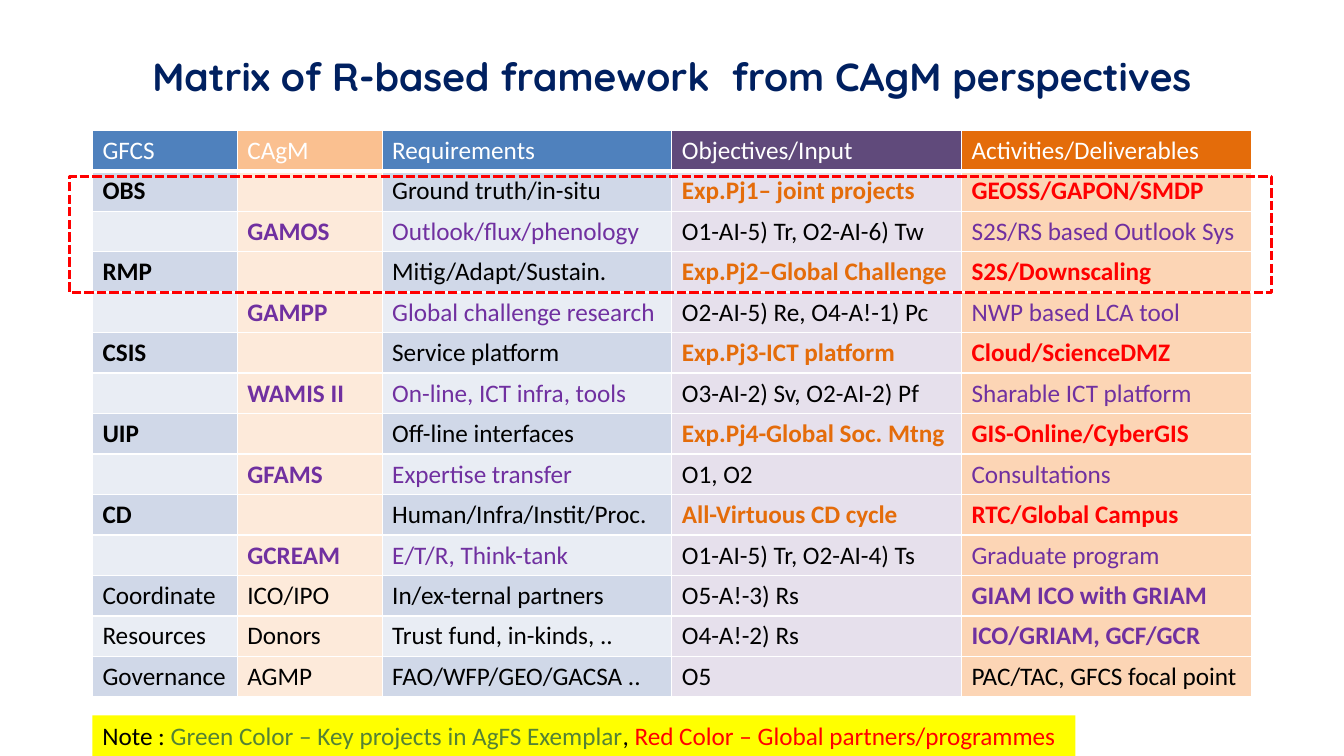
from dataclasses import dataclass

from lxml.etree import SubElement
from pptx import Presentation
from pptx.dml.color import RGBColor
from pptx.enum.dml import MSO_LINE
from pptx.enum.shapes import MSO_SHAPE
from pptx.enum.text import MSO_ANCHOR, MSO_AUTO_SIZE, PP_ALIGN
from pptx.oxml.ns import qn
from pptx.util import Cm, Pt

BLACK, WHITE, RED = "000000", "FFFFFF", "FF0000"
PURPLE, ORANGE, GREEN, NAVY = "7030A0", "E46C0A", "548235", "002060"
BODY = {"name": "Calibri", "size": Pt(18)}


@dataclass(frozen=True)
class Style:
    color: str
    bold: bool = False


@dataclass(frozen=True)
class MatrixRow:
    texts: tuple[str, ...]
    styles: tuple[Style, ...]
    fills: tuple[str, ...]
    rule_below: float = 1


PLAIN, STRONG = Style(BLACK), Style(BLACK, True)
VIOLET, VIOLET_STRONG = Style(PURPLE), Style(PURPLE, True)

# Text styles for each kind of row
HEADER = (Style(WHITE),) * 5
PILLAR = (STRONG, PLAIN, PLAIN, Style(ORANGE, True), Style(RED, True))
CENTRE = (PLAIN, VIOLET_STRONG, VIOLET, PLAIN, VIOLET)
SUPPORT = (PLAIN, PLAIN, PLAIN, PLAIN, VIOLET_STRONG)
CLOSING = (PLAIN,) * 5

HEADER_FILLS = ("4F81BD", "FAC090", "4F81BD", "604A7B", ORANGE)
HEADINGS = ("GFCS", "CAgM", "Requirements", "Objectives/Input",
            "Activities/Deliverables")
CONTENT = (
    (PILLAR, ("OBS", "", "Ground truth/in-situ", "Exp.Pj1– joint projects",
              "GEOSS/GAPON/SMDP")),
    (CENTRE, ("", "GAMOS", "Outlook/flux/phenology",
              "O1-AI-5) Tr, O2-AI-6) Tw", "S2S/RS based Outlook Sys")),
    (PILLAR, ("RMP", "", "Mitig/Adapt/Sustain.", "Exp.Pj2–Global Challenge",
              "S2S/Downscaling")),
    (CENTRE, ("", "GAMPP", "Global challenge research",
              "O2-AI-5) Re, O4-A!-1) Pc", "NWP based LCA tool")),
    (PILLAR, ("CSIS", "", "Service platform", "Exp.Pj3-ICT platform",
              "Cloud/ScienceDMZ")),
    (CENTRE, ("", "WAMIS II", "On-line, ICT infra, tools",
              "O3-AI-2) Sv, O2-AI-2) Pf", "Sharable ICT platform")),
    (PILLAR, ("UIP", "", "Off-line interfaces", "Exp.Pj4-Global Soc. Mtng",
              "GIS-Online/CyberGIS")),
    (CENTRE, ("", "GFAMS", "Expertise transfer", "O1, O2", "Consultations")),
    (PILLAR, ("CD", "", "Human/Infra/Instit/Proc.", "All-Virtuous CD cycle",
              "RTC/Global Campus")),
    (CENTRE, ("", "GCREAM", "E/T/R, Think-tank", "O1-AI-5) Tr, O2-AI-4) Ts",
              "Graduate program")),
    (SUPPORT, ("Coordinate", "ICO/IPO", "In/ex-ternal partners",
               "O5-A!-3) Rs", "GIAM ICO with GRIAM")),
    (SUPPORT, ("Resources", "Donors", "Trust fund, in-kinds, ..",
               "O4-A!-2) Rs", "ICO/GRIAM, GCF/GCR")),
    (CLOSING, ("Governance", "AGMP", "FAO/WFP/GEO/GACSA ..", "O5",
               "PAC/TAC, GFCS focal point")),
)
NOTE = (
    ("Note : ", BLACK),
    ("Green Color – Key projects in AgFS Exemplar", GREEN),
    (", ", BLACK),
    ("Red Color – Global partners/programmes", RED),
)
LEFT, WIDTH = 2.33, 29.2
COLUMN_WIDTHS = (3.65, 3.65, 7.3, 7.3, 7.3)
ROW_HEIGHT = 1.02


def rgb(color: str) -> RGBColor:
    return RGBColor.from_string(color)


def apply(target, values: dict) -> None:
    for attribute, value in values.items():
        setattr(target, attribute, value)


def paint(fill, color: str) -> None:
    fill.solid()
    fill.fore_color.rgb = rgb(color)


def add_run(paragraph, text: str, style: Style, font_format: dict) -> None:
    run = paragraph.add_run()
    run.text = text
    apply(run.font, font_format | {"bold": style.bold})
    run.font.color.rgb = rgb(style.color)


def add_borders(cell, below: float) -> None:
    properties = cell._tc.get_or_add_tcPr()
    widths = {"a:lnL": 1, "a:lnR": 1, "a:lnT": 1, "a:lnB": below}
    for index, (side, width) in enumerate(widths.items()):
        border = SubElement(properties, qn(side), w=str(Pt(width)))
        SubElement(SubElement(border, qn("a:solidFill")),
                   qn("a:srgbClr"), val=WHITE)
        properties.insert(index, border)


def matrix_rows() -> list[MatrixRow]:
    rows = [MatrixRow(HEADINGS, HEADER, HEADER_FILLS, 3)]
    for index, (styles, texts) in enumerate(CONTENT):
        band = ("D0D8E8", "E9EDF4")[index % 2]
        fills = (band, "FDEADA", band, "E6E0EC", "FCD5B5")
        rows.append(MatrixRow(texts, styles, fills))
    return rows


def add_title(slide) -> None:
    title = slide.shapes.add_textbox(Cm(LEFT), Cm(0.69), Cm(WIDTH), Cm(2.44))
    apply(title.text_frame,
          {"word_wrap": True, "vertical_anchor": MSO_ANCHOR.MIDDLE})
    paragraph = title.text_frame.paragraphs[0]
    paragraph.alignment = PP_ALIGN.CENTER
    add_run(paragraph, "Matrix of R-based framework  from CAgM perspectives",
            Style(NAVY, True), {"name": "Quicksand", "size": Pt(28)})


def add_matrix(slide, rows: list[MatrixRow]) -> None:
    matrix = slide.shapes.add_table(
        len(rows), len(COLUMN_WIDTHS), Cm(LEFT), Cm(3.28),
        Cm(WIDTH), Cm(ROW_HEIGHT * len(rows))).table
    for column, width in zip(matrix.columns, COLUMN_WIDTHS):
        column.width = Cm(width)
    for table_row, row in zip(matrix.rows, rows):
        table_row.height = Cm(ROW_HEIGHT)
        for cell, text, style, fill in zip(
                table_row.cells, row.texts, row.styles, row.fills):
            paint(cell.fill, fill)
            add_borders(cell, row.rule_below)
            paragraph = cell.text_frame.paragraphs[0]
            if text:
                add_run(paragraph, text, style, BODY)
            else:
                apply(paragraph.font, BODY)


def add_note(slide) -> None:
    note = slide.shapes.add_shape(
        MSO_SHAPE.RECTANGLE, Cm(LEFT), Cm(18.03), Cm(24.77), Cm(1.03))
    note.shadow.inherit = False
    paint(note.fill, "FFFF00")
    note.line.fill.background()
    apply(note.text_frame, {"word_wrap": False,
                            "auto_size": MSO_AUTO_SIZE.SHAPE_TO_FIT_TEXT,
                            "vertical_anchor": MSO_ANCHOR.TOP})
    paragraph = note.text_frame.paragraphs[0]
    paragraph.alignment = PP_ALIGN.LEFT
    for text, color in NOTE:
        add_run(paragraph, text, Style(color), BODY)


def add_highlight(slide) -> None:
    highlight = slide.shapes.add_shape(
        MSO_SHAPE.RECTANGLE, Cm(1.75), Cm(4.45), Cm(30.3), Cm(2.92))
    highlight.shadow.inherit = False
    highlight.fill.background()
    highlight.line.color.rgb = rgb(RED)
    apply(highlight.line,
          {"width": Pt(2.25), "dash_style": MSO_LINE.SQUARE_DOT})


def main() -> None:
    presentation = Presentation()
    apply(presentation, {"slide_width": Cm(33.87), "slide_height": Cm(19.05)})
    slide = presentation.slides.add_slide(presentation.slide_layouts[6])
    add_title(slide)
    add_matrix(slide, matrix_rows())
    add_note(slide)
    add_highlight(slide)
    presentation.save("out.pptx")


if __name__ == "__main__":
    main()
